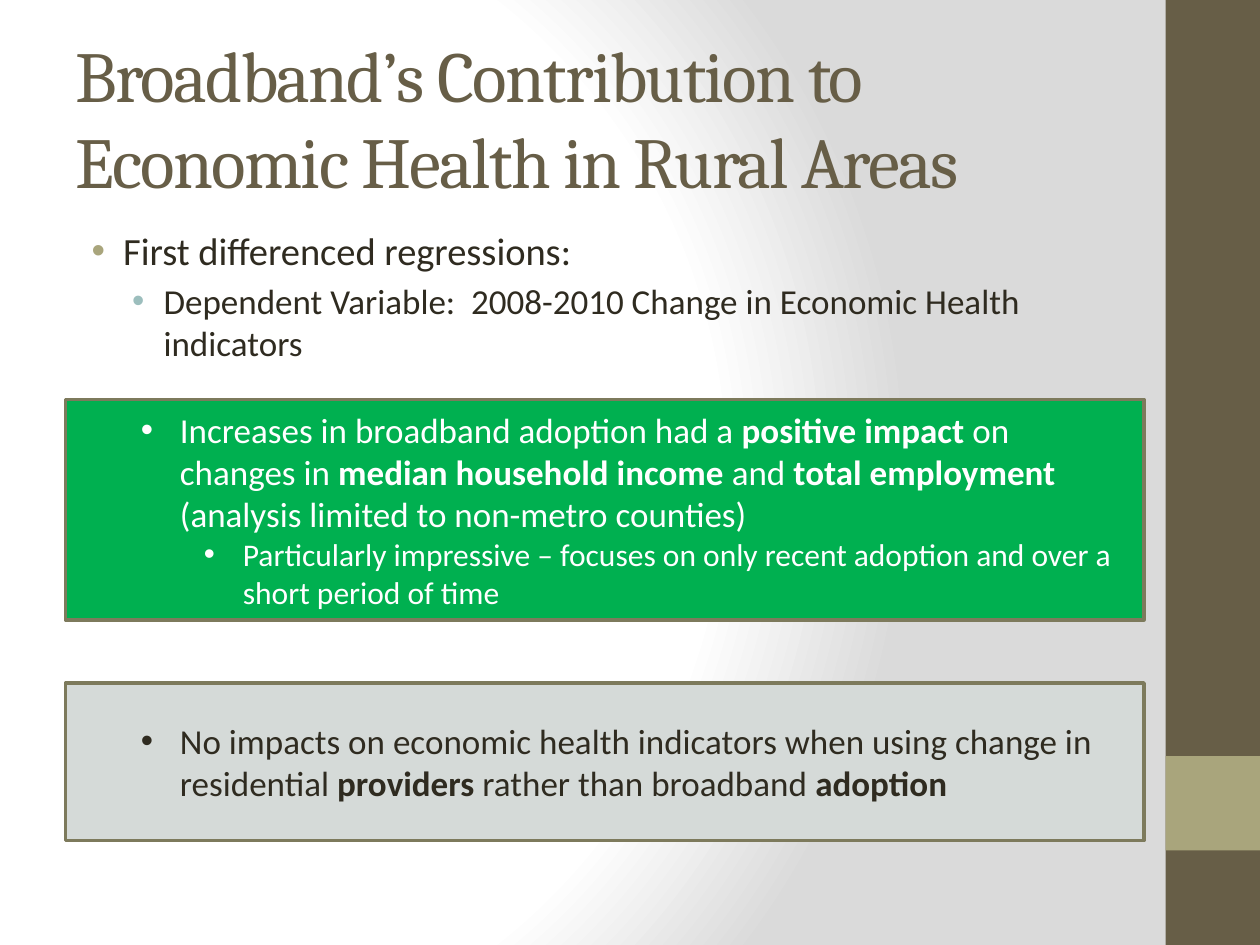
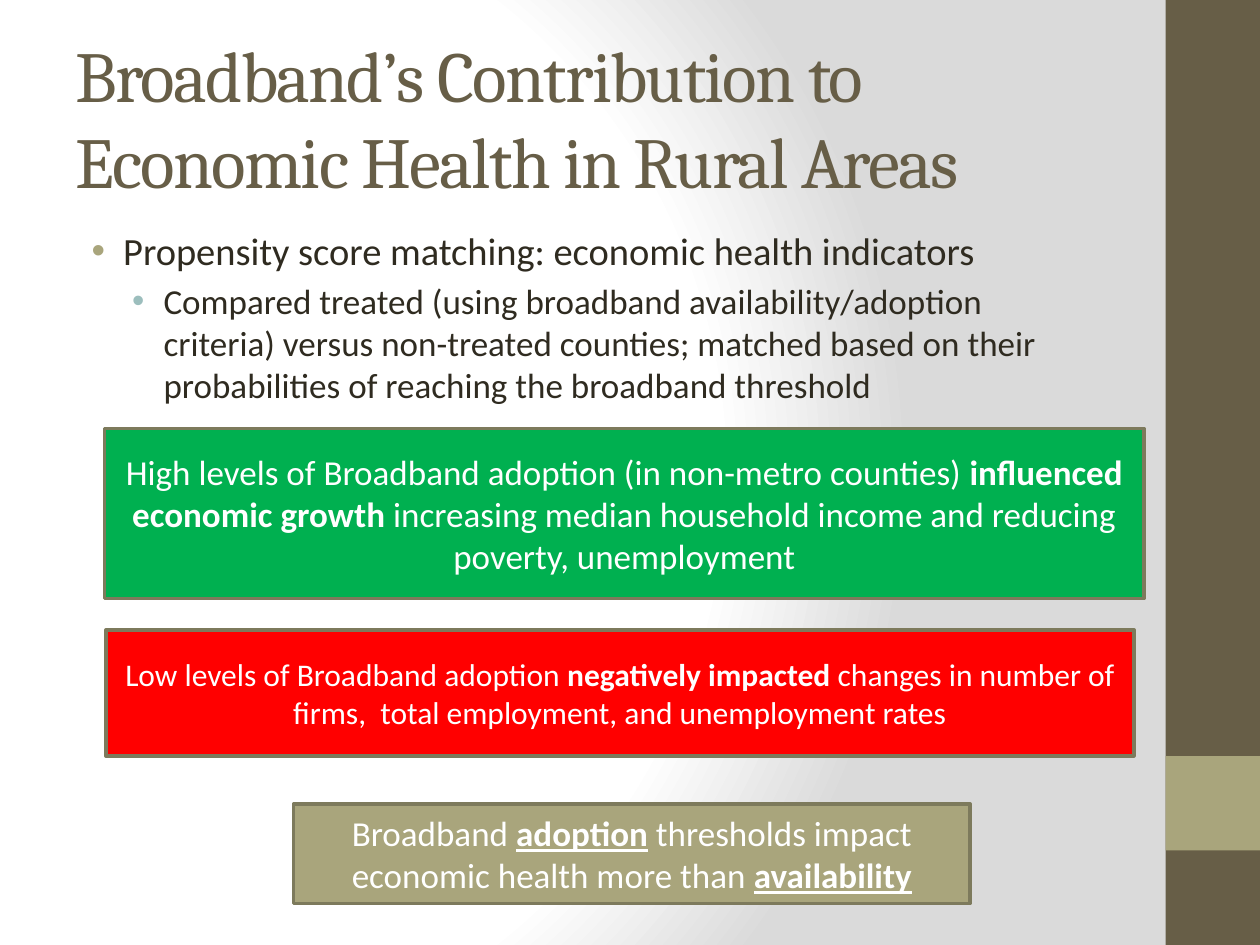
from lxml import etree
from pptx import Presentation
from pptx.dml.color import RGBColor
from pptx.enum.shapes import MSO_SHAPE as Shape
from pptx.enum.text import MSO_ANCHOR as Anchor, PP_ALIGN as Align
from pptx.oxml import parse_xml
from pptx.oxml.ns import qn
from pptx.util import Inches, Pt

# Content: a run is (text, style), style being "", "b" (bold) or "bu" (bold underlined)
TITLE = "Broadband’s Contribution to Economic Health in Rural Areas"
BROWN, KHAKI, TEAL = "675E47", "A9A57C", "9CBEBD"
INK, WHITE, BORDER = "2F2B20", "FFFFFF", "7D7A5C"
GREEN, RED, GREY = "00B050", "FF0000", "D5DAD8"

SLIDES = [
    {
        "topic": "First differenced regressions:",
        "detail": "Dependent Variable:  2008-2010 Change in Economic Health indicators",
        "body_height": 5.25,
        "findings": [
            {"place": (0.52, 3.17, 8.56, 1.75), "fill": GREEN, "color": WHITE, "paragraphs": [
                (1, 20, [("Increases in broadband adoption had a ", ""),
                         ("positive impact ", "b"),
                         ("on changes in ", ""),
                         ("median household income", "b"),
                         (" and ", ""),
                         ("total employment ", "b"),
                         ("(analysis limited to non-metro counties)", "")]),
                (2, 18, [("Particularly impressive – focuses on only recent adoption "
                          "and over a short period of time", "")])]},
            {"place": (0.52, 5.42, 8.56, 1.25), "fill": GREY, "color": INK, "paragraphs": [
                (1, 20, [("No impacts on economic health indicators when using change "
                          "in residential ", ""),
                         ("providers", "b"),
                         (" rather than broadband ", ""),
                         ("adoption", "b")])]},
        ],
    },
    {
        "topic": "Propensity score matching: economic health indicators",
        "detail": "Compared treated (using broadband availability/adoption criteria) versus "
                  "non-treated counties; matched based on their probabilities of reaching "
                  "the broadband threshold",
        "body_height": 1.58,
        "findings": [
            {"place": (0.83, 3.4, 8.25, 1.35), "fill": GREEN, "color": WHITE, "paragraphs": [
                (0, 20, [("High levels of Broadband adoption (in non-metro counties) ", ""),
                         ("influenced economic growth ", "b"),
                         ("increasing median household income and reducing poverty, "
                          "unemployment", "")])]},
            {"place": (0.84, 5, 8.16, 1), "fill": RED, "color": WHITE, "paragraphs": [
                (0, 18, [("Low levels of Broadband adoption ", ""),
                         ("negatively impacted ", "b"),
                         ("changes in number of firms,  total employment, and "
                          "unemployment rates", "")])]},
            {"place": (2.33, 6.38, 5.37, 0.79), "fill": KHAKI, "color": WHITE, "paragraphs": [
                (0, 20, [("Broadband ", ""),
                         ("adoption", "bu"),
                         (" thresholds impact economic health more than ", ""),
                         ("availability", "bu")])]},
        ],
    },
]

# Level in a finding box -> left margin; level 0 is centred without a bullet
FINDING_MARGINS = {1: 0.81, 2: 1.31}

BACKDROP = """<a:gradFill rotWithShape="1"
  xmlns:a="http://schemas.openxmlformats.org/drawingml/2006/main"><a:gsLst>
  <a:gs pos="0"><a:srgbClr val="FFFFFF"/></a:gs>
  <a:gs pos="75000"><a:srgbClr val="FFFFFF"/></a:gs>
  <a:gs pos="100000"><a:srgbClr val="DADADA"/></a:gs></a:gsLst>
  <a:path path="circle"><a:fillToRect l="20000" t="50000" r="100000" b="50000"/></a:path>
</a:gradFill>"""


def rgb(value):
    return RGBColor.from_string(value)


def add_run(paragraph, text, size, color, style="", font="Calibri"):
    run = paragraph.add_run()
    run.text = text
    run.font.name, run.font.size = font, Pt(size)
    run.font.color.rgb = rgb(color)
    if "b" in style:
        run.font.bold = True
    if "u" in style:
        run.font.underline = True
    return run


def set_bullet(paragraph, margin, hang, color):
    props = paragraph._p.get_or_add_pPr()
    props.set("marL", str(Inches(margin)))
    props.set("indent", str(-Inches(hang)))
    bullet_color = etree.SubElement(props, qn("a:buClr"))
    etree.SubElement(bullet_color, qn("a:srgbClr"), val=color)
    etree.SubElement(props, qn("a:buFont"), typeface="Arial")
    etree.SubElement(props, qn("a:buChar"), char="•")


def add_paragraph(frame, index):
    return frame.add_paragraph() if index else frame.paragraphs[0]


def add_block(slide, place, fill, border=None):
    block = slide.shapes.add_shape(Shape.RECTANGLE, *map(Inches, place))
    block.shadow.inherit = False
    block.fill.solid()
    block.fill.fore_color.rgb = rgb(fill)
    if border:
        block.line.color.rgb = rgb(border)
        block.line.width = Pt(2)
    else:
        block.line.fill.background()
    return block


def add_text_frame(slide, place):
    frame = slide.shapes.add_textbox(*map(Inches, place)).text_frame
    frame.word_wrap = True
    return frame


def add_base(slide):
    # Backdrop, side band and title
    slide.background.fill.solid()
    solid = slide._element.find(".//" + qn("p:bgPr")).find(qn("a:solidFill"))
    solid.getparent().replace(solid, parse_xml(BACKDROP))
    add_block(slide, (9.25, 0, 0.75, 7.5), BROWN)
    add_block(slide, (9.25, 6, 0.75, 0.75), KHAKI)
    frame = add_text_frame(slide, (0.5, 0.3, 8.33, 1.25))
    frame.vertical_anchor = Anchor.MIDDLE
    run = add_run(frame.paragraphs[0], TITLE, 41, BROWN, font="Cambria")
    run.font._element.set("spc", "-100")


def add_body(slide, topic, detail, height):
    frame = add_text_frame(slide, (0.5, 1.75, 8.33, height))
    rows = [(topic, 22, 0.38, KHAKI), (detail, 20, 0.7, TEAL)]
    for level, (text, size, margin, bullet_color) in enumerate(rows):
        paragraph = add_paragraph(frame, level)
        paragraph.level = level
        paragraph.space_before = Pt(size * 0.2)
        set_bullet(paragraph, margin, 0.25, bullet_color)
        add_run(paragraph, text, size, INK)


def add_finding(slide, place, fill, color, paragraphs):
    frame = add_block(slide, place, fill, BORDER).text_frame
    frame.word_wrap = True
    frame.vertical_anchor = Anchor.MIDDLE
    for index, (level, size, runs) in enumerate(paragraphs):
        paragraph = add_paragraph(frame, index)
        paragraph.level = level
        paragraph.alignment = Align.LEFT if level else Align.CENTER
        if level:
            set_bullet(paragraph, FINDING_MARGINS[level], 0.31, color)
        for text, style in runs:
            add_run(paragraph, text, size, color, style)


def main():
    deck = Presentation()
    deck.slide_width, deck.slide_height = Inches(10), Inches(7.5)
    for content in SLIDES:
        slide = deck.slides.add_slide(deck.slide_layouts[6])
        add_base(slide)
        add_body(slide, content["topic"], content["detail"], content["body_height"])
        for finding in content["findings"]:
            add_finding(slide, **finding)
    deck.save("out.pptx")


if __name__ == "__main__":
    main()
